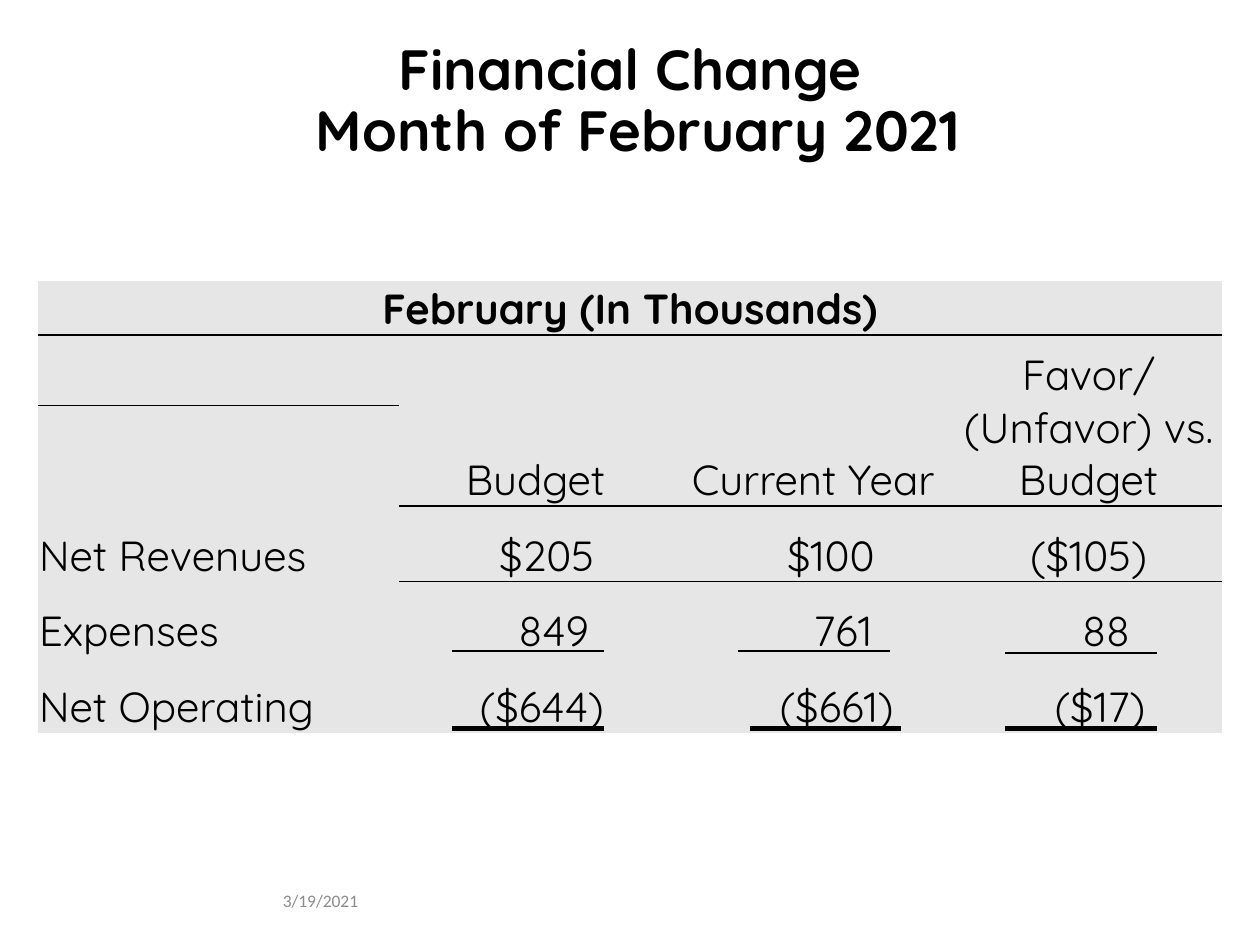
"""Build the monthly financial change slide."""
from dataclasses import dataclass
from typing import Any

from lxml import etree
from pptx import Presentation
from pptx.dml.color import RGBColor
from pptx.enum import shapes, text
from pptx.oxml import ns
from pptx.util import Inches, Pt


@dataclass(frozen=True)
class Theme:
    ink: str = "000000"
    panel: str = "E7E6E6"
    muted: str = "8C8C8C"
    heading_font: str = "Quicksand"
    date_font: str = "Calibri"
    title_size: float = 32.4
    table_size: float = 24
    date_size: float = 10


@dataclass(frozen=True)
class Entry:
    row: int
    column: int
    wording: str
    inset: float = 0


@dataclass(frozen=True)
class Rule:
    left: float
    top: float
    weight: float


THEME = Theme()
COLUMN_WIDTHS = (2.87, 2.16, 2.25, 2.12)
ROW_HEIGHTS = (0.42, 0.56, 0.4, 0.4, 0.6, 0.6, 0.6)
NO_GRID_STYLE = "{2D5ABB26-0587-4C30-8999-92F81FD0307C}"
RULE_LENGTH = 1.2
EDGES = {0: ("a:lnB",), 1: ("a:lnT", "a:lnB"), 3: ("a:lnB",), 4: ("a:lnT",)}
ENTRIES = (
    Entry(0, 0, "February (In Thousands)"),
    Entry(1, 1, "Budget"),
    Entry(1, 2, "Current Year"),
    Entry(1, 3, "Favor/ (Unfavor) vs. Budget"),
    Entry(4, 0, "Net Revenues"),
    Entry(4, 1, "$205", 0.18),
    Entry(4, 2, "$100", 0.28),
    Entry(4, 3, "($105)"),
    Entry(5, 0, "Expenses"),
    Entry(5, 1, "849", 0.29),
    Entry(5, 2, "761", 0.47),
    Entry(5, 3, "88", 0.28),
    Entry(6, 0, "Net Operating"),
    Entry(6, 1, "($644)", 0.1),
    Entry(6, 2, "($661)", 0.37),
    Entry(6, 3, "($17)", 0.18),
)
RULES = (
    Rule(3.59, 5.17, 1.25),
    Rule(5.86, 5.17, 1.25),
    Rule(7.98, 5.18, 1.25),
    Rule(3.59, 5.78, 3),
    Rule(5.95, 5.78, 3),
    Rule(7.98, 5.78, 3),
)


def format_text(frame: Any, font: str, size: float, color: str, bold: bool, align: Any) -> None:
    for paragraph in frame.paragraphs:
        paragraph.alignment = align
        for run in paragraph.runs:
            run.font.name = font
            run.font.size = Pt(size)
            run.font.bold = bold
            run.font.color.rgb = RGBColor.from_string(color)


def add_title(slide: Any) -> None:
    title = slide.shapes.title
    title.left, title.top = Inches(0.9), Inches(0.25)
    title.width, title.height = Inches(8.2), Inches(1.13)
    frame = title.text_frame
    frame.text = "Financial Change\v Month of February 2021"
    frame.vertical_anchor = text.MSO_ANCHOR.MIDDLE
    frame.paragraphs[0].line_spacing = 0.9
    format_text(frame, THEME.heading_font, THEME.title_size, THEME.ink, True, text.PP_ALIGN.CENTER)


def add_edge(cell: Any, edge: str) -> None:
    properties = cell._tc.get_or_add_tcPr()
    line = etree.Element(ns.qn(edge), w=str(Pt(1)))
    fill = etree.SubElement(line, ns.qn("a:solidFill"))
    etree.SubElement(fill, ns.qn("a:srgbClr"), val=THEME.ink)
    position = len(properties.findall(ns.qn("a:lnT")))
    properties.insert(position, line)


def format_cell(cell: Any, row: int, column: int) -> None:
    cell.fill.solid()
    cell.fill.fore_color.rgb = RGBColor.from_string(THEME.panel)
    cell.vertical_anchor = text.MSO_ANCHOR.BOTTOM
    cell.margin_left = cell.margin_right = cell.margin_top = Inches(0.01)
    cell.margin_bottom = 0
    if row == 0 or column > 0 or row == 1:
        for edge in EDGES.get(row, ()):
            if edge == "a:lnT" or row == 0 or column > 0:
                add_edge(cell, edge)


def add_summary_table(slide: Any) -> None:
    frame = slide.shapes.add_table(
        len(ROW_HEIGHTS), len(COLUMN_WIDTHS), Inches(0.3), Inches(2.23),
        Inches(sum(COLUMN_WIDTHS)), Inches(sum(ROW_HEIGHTS)),
    )
    table = frame.table
    table.first_row = table.horz_banding = False
    frame._element.find(".//" + ns.qn("a:tableStyleId")).text = NO_GRID_STYLE
    for column, width in zip(table.columns, COLUMN_WIDTHS):
        column.width = Inches(width)
    for row, height in zip(table.rows, ROW_HEIGHTS):
        row.height = Inches(height)
    for row in range(len(ROW_HEIGHTS)):
        for column in range(len(COLUMN_WIDTHS)):
            format_cell(table.cell(row, column), row, column)
    table.cell(0, 0).merge(table.cell(0, 3))
    for column in range(1, len(COLUMN_WIDTHS)):
        table.cell(1, column).merge(table.cell(3, column))
    for entry in ENTRIES:
        cell = table.cell(entry.row, entry.column)
        cell.text_frame.text = entry.wording
        cell.margin_left = Inches(0.01 + entry.inset)
        is_label = entry.column == 0 and entry.row > 0
        align = text.PP_ALIGN.LEFT if is_label else text.PP_ALIGN.CENTER
        format_text(cell.text_frame, THEME.heading_font, THEME.table_size, THEME.ink, entry.row == 0, align)


def add_rule(slide: Any, rule: Rule) -> None:
    connector = slide.shapes.add_connector(
        shapes.MSO_CONNECTOR.STRAIGHT, Inches(rule.left), Inches(rule.top),
        Inches(rule.left + RULE_LENGTH), Inches(rule.top),
    )
    connector.line.color.rgb = RGBColor.from_string(THEME.ink)
    connector.line.width = Pt(rule.weight)
    etree.SubElement(connector._element.spPr, ns.qn("a:effectLst"))


def add_date(slide: Any) -> None:
    frame = slide.shapes.add_textbox(Inches(0.69), Inches(6.95), Inches(2.25), Inches(0.4)).text_frame
    frame.word_wrap = True
    frame.vertical_anchor = text.MSO_ANCHOR.MIDDLE
    frame.text = "3/19/2021"
    format_text(frame, THEME.date_font, THEME.date_size, THEME.muted, False, text.PP_ALIGN.RIGHT)


def main() -> None:
    presentation = Presentation()
    presentation.slide_width, presentation.slide_height = Inches(10), Inches(7.5)
    slide = presentation.slides.add_slide(presentation.slide_layouts[5])
    add_title(slide)
    add_summary_table(slide)
    for rule in RULES:
        add_rule(slide, rule)
    add_date(slide)
    presentation.save("out.pptx")


if __name__ == "__main__":
    main()
